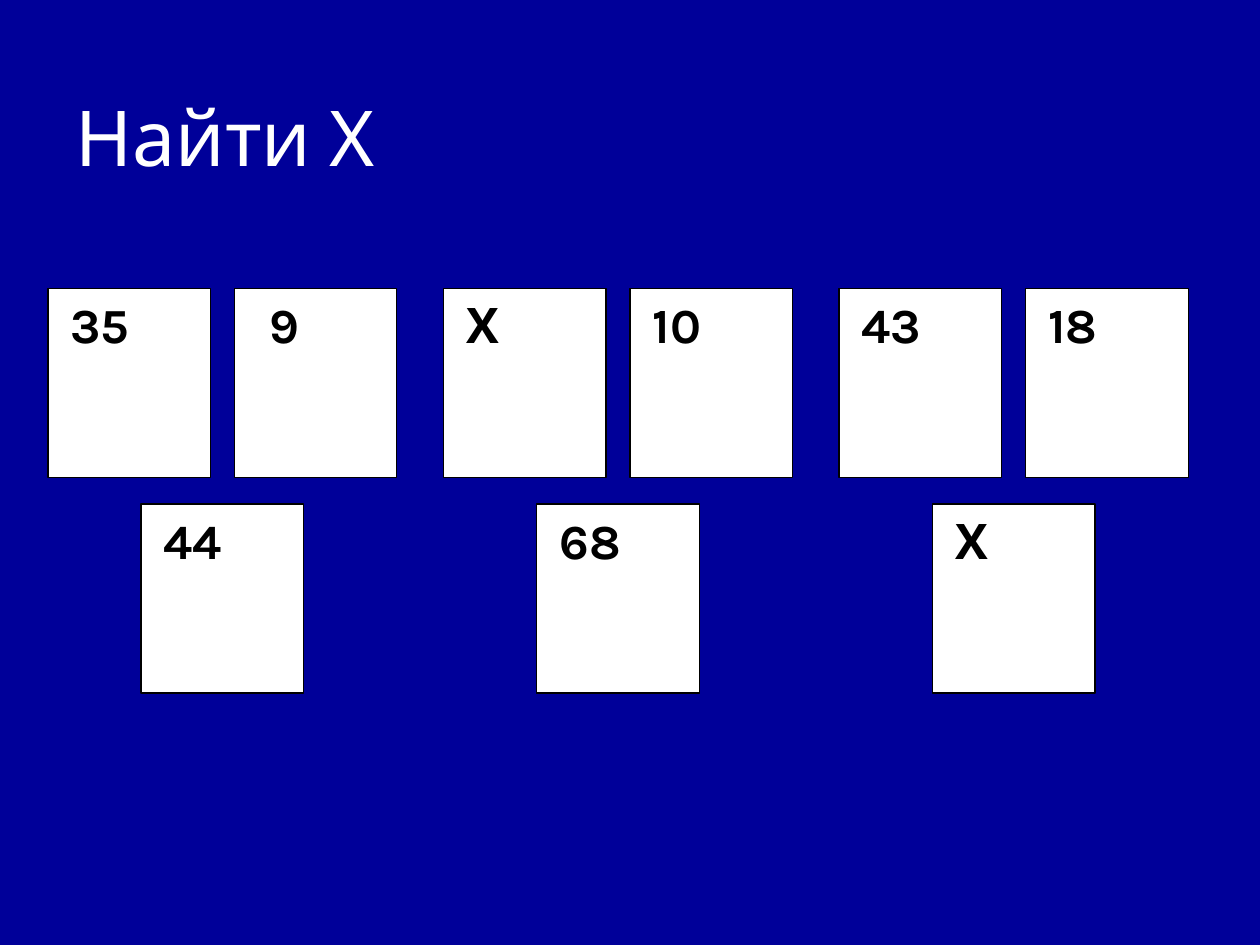
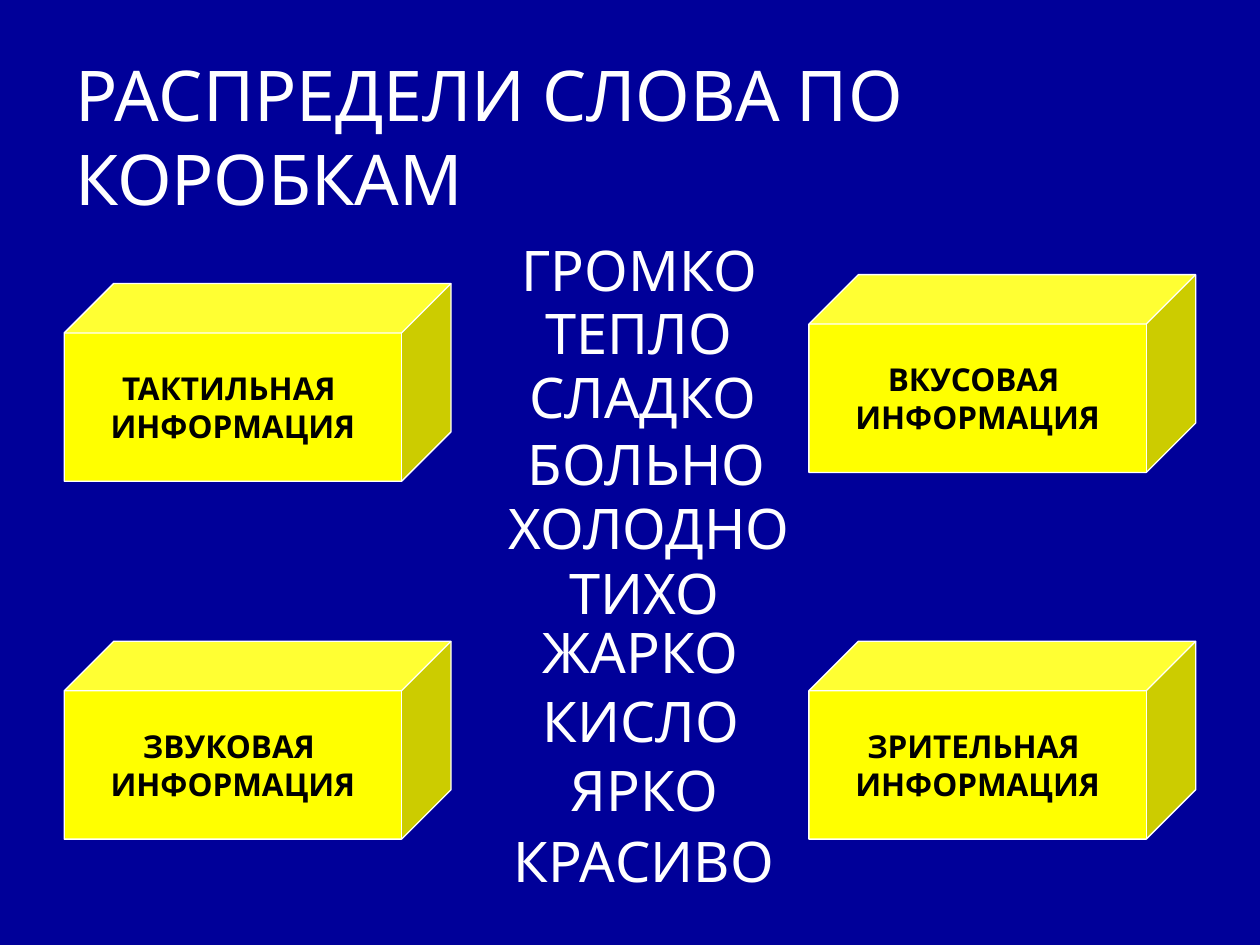
from pptx import Presentation
from pptx.dml.color import RGBColor
from pptx.enum.shapes import MSO_SHAPE
from pptx.enum.text import MSO_ANCHOR, MSO_AUTO_SIZE, PP_ALIGN
from pptx.util import Inches, Pt

COLORS = {"background": "000099", "light": "FFFFFF", "dark": "000000", "box": "FFFF00"}
COLUMN = ROW = Inches(0.1)

FONTS = {
    "title": {"name": "Karla", "size": Pt(44), "bold": False},
    "long_title": {"name": "Karla", "size": Pt(40), "bold": False},
    "number": {"name": "Karla", "size": Pt(28), "bold": True},
    "label": {"name": "Karla", "size": Pt(18), "bold": True},
    "word": {"name": "Karla", "size": Pt(32), "bold": False},
}
FRAMES = {
    "title": {"word_wrap": True, "vertical_anchor": MSO_ANCHOR.MIDDLE},
    "number": {"word_wrap": True, "vertical_anchor": MSO_ANCHOR.TOP},
    "label": {"word_wrap": False, "vertical_anchor": MSO_ANCHOR.MIDDLE},
    "word": {"word_wrap": True, "auto_size": MSO_AUTO_SIZE.SHAPE_TO_FIT_TEXT},
}

TITLE_BOX = (5, 3.2, 90, 15.1)
CARD_SIZE = (12.9, 15)
CARD_OFFSETS = [(0, 0), (14.8, 0), (7.4, 17.1)]
PUZZLES_BOX = (3.8, 22.9, 94.2, 32.1)
PUZZLES = [("35", "9", "44"), ("Х", "10", "68"), ("43", "18", "Х")]
CARD_INDENT, SINGLE_DIGIT_INDENT = 1.8, 2.8

BOX_SIZE = (30.7, 15.7)
LEFT, RIGHT = 5.1, 64.2
BOXES = [
    ("ТАКТИЛЬНАЯ", LEFT, 22.5),
    ("ЗВУКОВАЯ", LEFT, 50.9),
    ("ВКУСОВАЯ", RIGHT, 21.8),
    ("ЗРИТЕЛЬНАЯ", RIGHT, 50.9),
]

WORDS_BOX = (39.4, 18.2, 26, 53.2)
WORD_HEIGHT = 6.3
WORDS = [
    ("ГРОМКО", 1, 0, 22.8, PP_ALIGN.LEFT),
    ("ТЕПЛО", 2.9, 5, 18.1, PP_ALIGN.LEFT),
    ("СЛАДКО", 1.6, 10.1, 20.5, PP_ALIGN.LEFT),
    ("БОЛЬНО", 1.5, 15.4, 21.2, PP_ALIGN.LEFT),
    ("ХОЛОДНО", 0, 20.5, 26, PP_ALIGN.LEFT),
    ("ТИХО", 2.7, 25.6, 18.1, PP_ALIGN.CENTER),
    ("ЖАРКО", 2.7, 30.3, 18.1, PP_ALIGN.LEFT),
    ("КИСЛО", 2.7, 35.8, 18.1, PP_ALIGN.LEFT),
    ("ЯРКО", 2.7, 41.3, 18.1, PP_ALIGN.CENTER),
    ("КРАСИВО", 0.4, 46.9, 25.2, PP_ALIGN.LEFT),
]


def color(name):
    return RGBColor.from_string(COLORS[name])


def set_attributes(target, values):
    for name, value in values.items():
        setattr(target, name, value)


def place(box):
    left, top, width, height = box
    return [round(left * COLUMN), round(top * ROW), round(width * COLUMN), round(height * ROW)]


def write(shape, lines, frame, font, font_color, alignment=PP_ALIGN.LEFT):
    text_frame = shape.text_frame
    set_attributes(text_frame, FRAMES[frame])
    text_frame.text = "\n".join(lines)
    for paragraph in text_frame.paragraphs:
        paragraph.alignment = alignment
        set_attributes(paragraph.font, FONTS[font])
        paragraph.font.color.rgb = color(font_color)


def add_block(shapes, kind, box, fill, line):
    shape = shapes.add_shape(kind, *place(box))
    shape.shadow.inherit = False
    shape.fill.solid()
    shape.fill.fore_color.rgb = color(fill)
    shape.line.color.rgb = color(line)
    shape.line.width = Pt(0.75)
    return shape


def add_title_slide(presentation, title, font):
    slide = presentation.slides.add_slide(presentation.slide_layouts[6])
    slide.background.fill.solid()
    slide.background.fill.fore_color.rgb = color("background")
    shape = slide.shapes.add_textbox(*place(TITLE_BOX))
    write(shape, [title], "title", font, "light")
    return slide


def add_puzzle(slide, box, numbers):
    left, top = box[:2]
    group = slide.shapes.add_group_shape()
    for number, (across, down) in zip(numbers, CARD_OFFSETS):
        card_box = (left + across, top + down, *CARD_SIZE)
        card = add_block(group.shapes, MSO_SHAPE.RECTANGLE, card_box, "light", "dark")
        write(card, [number], "number", "number", "dark")
        indent = SINGLE_DIGIT_INDENT if number == "9" else CARD_INDENT
        card.text_frame.margin_left = round(indent * COLUMN)


def add_puzzles(slide, box):
    left, top, width, height = box
    pitch = width / len(PUZZLES)
    for index, numbers in enumerate(PUZZLES):
        add_puzzle(slide, (left + index * pitch, top, pitch, height), numbers)


def add_information_box(slide, box, kind):
    cube = add_block(slide.shapes, MSO_SHAPE.CUBE, box, "box", "light")
    cube.adjustments[0] = 0.25
    write(cube, [f"{kind} ", "ИНФОРМАЦИЯ"], "label", "label", "dark", PP_ALIGN.CENTER)


def add_words(slide, box):
    left, top = box[:2]
    for word, across, down, width, alignment in WORDS:
        word_box = (left + across, top + down, width, WORD_HEIGHT)
        shape = slide.shapes.add_textbox(*place(word_box))
        write(shape, [word], "word", "word", "light", alignment)


def main():
    presentation = Presentation()
    set_attributes(presentation, {"slide_width": 100 * COLUMN, "slide_height": 75 * ROW})

    puzzle_slide = add_title_slide(presentation, "Найти Х", "title")
    add_puzzles(puzzle_slide, PUZZLES_BOX)

    sorting_slide = add_title_slide(presentation, "РАСПРЕДЕЛИ СЛОВА ПО КОРОБКАМ", "long_title")
    for kind, left, top in BOXES:
        add_information_box(sorting_slide, (left, top, *BOX_SIZE), kind)
    add_words(sorting_slide, WORDS_BOX)

    presentation.save("out.pptx")


if __name__ == "__main__":
    main()
